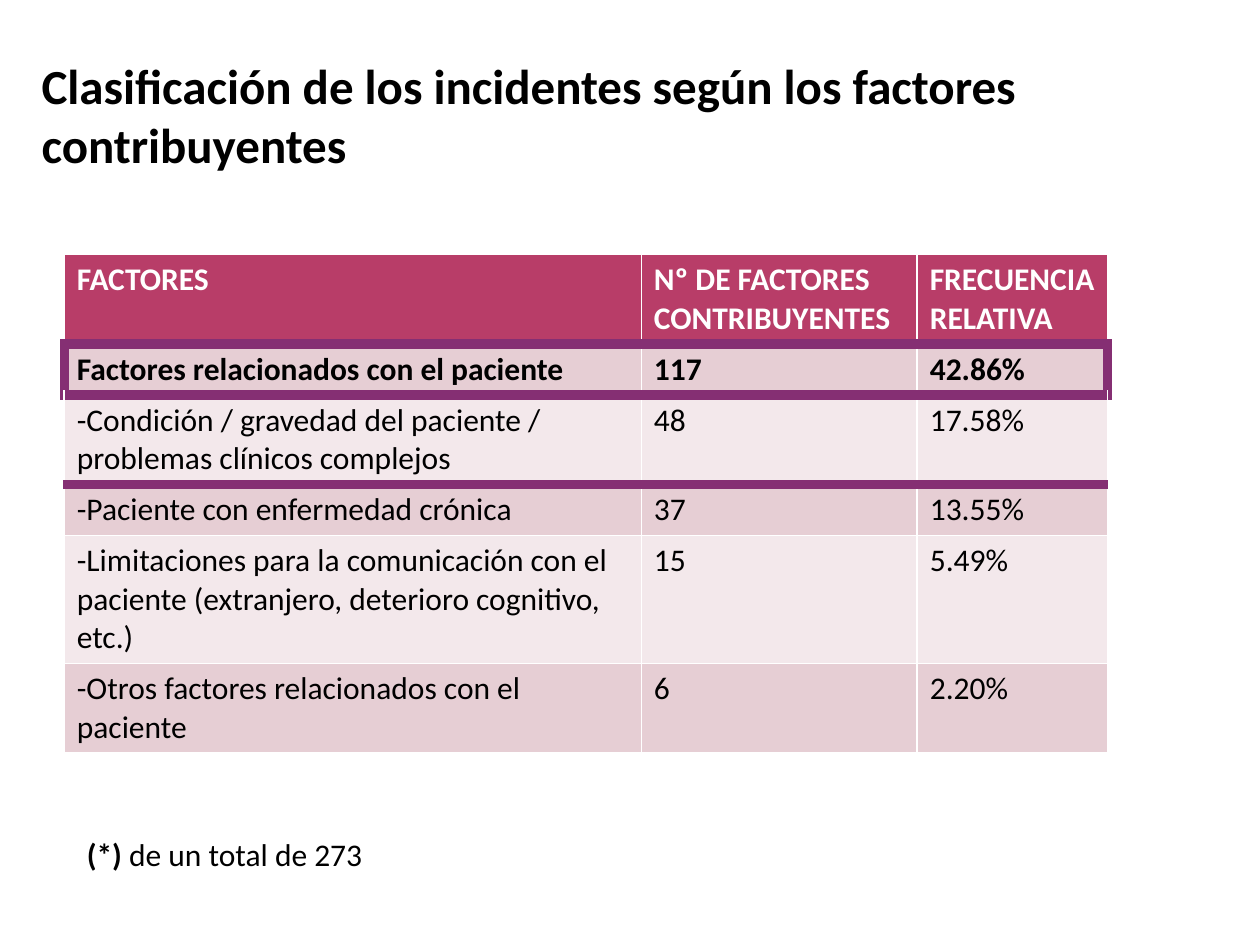
from pptx import Presentation
from pptx.dml.color import RGBColor as RGB
from pptx.enum.text import MSO_ANCHOR as Anchor
from pptx.oxml import parse_xml
from pptx.oxml.ns import nsdecls
from pptx.util import Emu, Inches, Pt

COLORS = {
    "text": "000000",
    "white": "FFFFFF",
    "header": "B83D68",
    "dark_band": "E6CED4",
    "light_band": "F3E8EB",
    "highlight": "852F73",
}
THIN = ("white", 1)
THICK = ("highlight", 6)

ROWS = [
    (2, ["FACTORES", "Nº DE FACTORES CONTRIBUYENTES", "FRECUENCIA RELATIVA"]),
    (1, ["Factores relacionados con el paciente", "117", "42.86%"]),
    (2, ["-Condición / gravedad del paciente / problemas clínicos complejos", "48", "17.58%"]),
    (1, ["-Paciente con enfermedad crónica", "37", "13.55%"]),
    (3, ["-Limitaciones para la comunicación con el paciente "
         "(extranjero, deterioro cognitivo, etc.)", "15", "5.49%"]),
    (2, ["-Otros factores relacionados con el paciente", "6", "2.20%"]),
]


class Deck:
    font = "Calibri"

    def __init__(self, width, height):
        self.prs = Presentation()
        self.prs.slide_width, self.prs.slide_height = Inches(width), Inches(height)
        self.s = self.prs.slides.add_slide(self.prs.slide_layouts[6])

    def x(self, share):
        return Emu(round(self.prs.slide_width * share / 100))

    def y(self, share):
        return Emu(round(self.prs.slide_height * share / 100))

    def box(self, left, top, width, height):
        return self.x(left), self.y(top), self.x(width), self.y(height)

    def add_runs(self, tf, runs, size, color="text"):
        p = tf.paragraphs[0]
        for text, bold in runs:
            r = p.add_run()
            r.text = text
            for name, value in {"name": self.font, "size": Pt(size), "bold": bold}.items():
                setattr(r.font, name, value)
            r.font.color.rgb = RGB.from_string(COLORS[color])

    def text(self, box, runs, size, **frame):
        tf = self.s.shapes.add_textbox(*self.box(*box)).text_frame
        for name, value in {"word_wrap": True, "vertical_anchor": Anchor.TOP, **frame}.items():
            setattr(tf, name, value)
        self.add_runs(tf, runs, size)

    def border(self, cell, side, color, width):
        cell._tc.get_or_add_tcPr().append(parse_xml(
            f'<a:ln{side} {nsdecls("a")} w="{Pt(width)}"><a:solidFill>'
            f'<a:srgbClr val="{COLORS[color]}"/></a:solidFill></a:ln{side}>'))

    def cell(self, cell, text, fill, color, bold, borders):
        for side in "LRTB":
            if side in borders:
                self.border(cell, side, *borders[side])
        cell.fill.solid()
        cell.fill.fore_color.rgb = RGB.from_string(COLORS[fill])
        self.add_runs(cell.text_frame, [(text, bold)], 18, color)

    def table(self, left, top, widths, rows):
        heights = [1.33 + 4.07 * lines for lines, _ in rows]
        box = self.box(left, top, sum(widths), sum(heights))
        table = self.s.shapes.add_table(len(rows), len(widths), *box).table
        for column, width in zip(table.columns, widths):
            column.width = self.x(width)
        for row, height in zip(table.rows, heights):
            row.height = self.y(height)
        last = len(widths) - 1
        for i, (_, texts) in enumerate(rows):
            fill = "header" if i == 0 else "dark_band" if i % 2 else "light_band"
            for j, text in enumerate(texts):
                borders = {
                    "L": THIN, "R": THIN,
                    "T": THICK if i in (1, 2, 3) else THIN,
                    "B": THICK if i in (0, 1, 2) else THIN,
                }
                if i == 1:
                    borders.update({"L": THICK} if j == 0 else {})
                    borders.update({"R": THICK} if j == last else {})
                    if j < 2:
                        borders.pop("RL"[j])
                self.cell(table.cell(i, j), text, fill,
                          "white" if i == 0 else "text", i < 2, borders)

    def save(self):
        self.prs.save("out.pptx")


def main():
    deck = Deck(10, 7.5)
    deck.text((2.8, 5.87, 81.2, 17.87),
              [("Clasificación de los incidentes según los factores contribuyentes", True)], 28,
              margin_left=Inches(0.05), margin_top=0, margin_right=0, margin_bottom=0)
    deck.table(5.1, 26.93, [45.8, 21.9, 15.1], ROWS)
    deck.text((5.9, 87.73, 94.1, 5.33), [("(*)", True), (" de un total de 273", False)], 18)
    deck.save()


if __name__ == "__main__":
    main()
